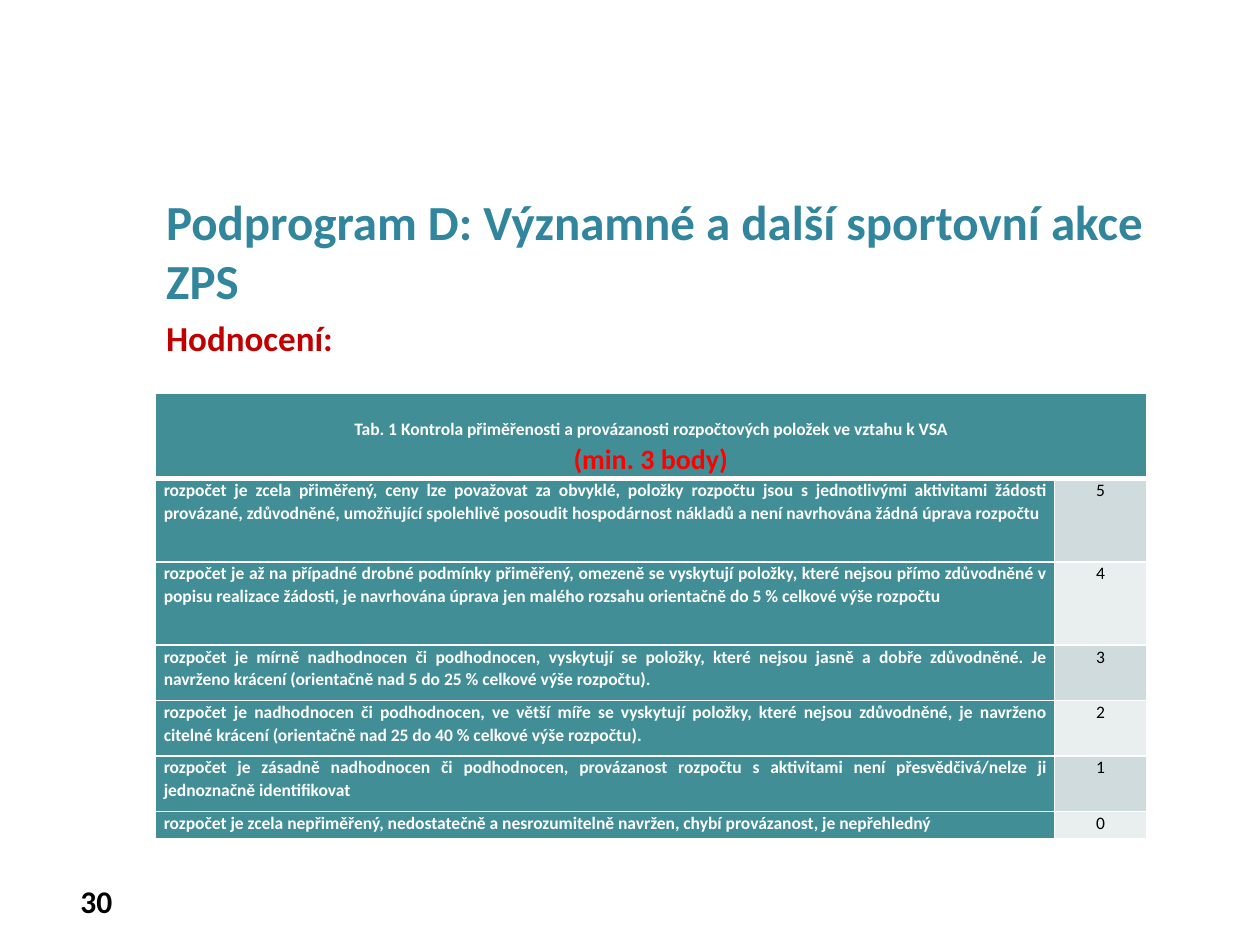
from typing import NamedTuple

from pptx import Presentation
from pptx.dml.color import RGBColor
from pptx.enum import text as t
from pptx.oxml import ns, xmlchemy as x
from pptx.util import Inches, Pt

FONT = "Calibri"
BLUE = RGBColor(0x31, 0x85, 0x9C)
DARK = RGBColor(0xC0, 0x00, 0x00)
RED = RGBColor(0xFF, 0x00, 0x00)
TEAL = RGBColor(0x41, 0x8E, 0x96)
GRAY = RGBColor(0xCF, 0xDB, 0xDD)
PALE = RGBColor(0xE9, 0xEE, 0xEF)
WHITE = RGBColor(0xFF, 0xFF, 0xFF)
BLACK = RGBColor(0x00, 0x00, 0x00)
LEFT, MID, RIGHT, JUST = (t.PP_ALIGN.LEFT, t.PP_ALIGN.CENTER,
                          t.PP_ALIGN.RIGHT, t.PP_ALIGN.JUSTIFY)


class Grade(NamedTuple):
    text: str
    score: int
    high: float


GRADES = [
    Grade("rozpočet je zcela přiměřený, ceny lze považovat za obvyklé, položky "
          "rozpočtu jsou s jednotlivými aktivitami žádosti provázané, zdůvodněné, "
          "umožňující spolehlivě posoudit hospodárnost nákladů a není navrhována "
          "žádná úprava rozpočtu", 5, 0.66),
    Grade("rozpočet je až na případné drobné podmínky přiměřený, omezeně se "
          "vyskytují položky, které nejsou přímo zdůvodněné v popisu realizace "
          "žádosti, je navrhována úprava jen malého rozsahu orientačně do 5 % "
          "celkové výše rozpočtu", 4, 0.66),
    Grade("rozpočet je mírně nadhodnocen či podhodnocen, vyskytují se položky, "
          "které nejsou jasně a dobře zdůvodněné. Je navrženo krácení (orientačně "
          "nad 5 do 25 % celkové výše rozpočtu).", 3, 0.44),
    Grade("rozpočet je nadhodnocen či podhodnocen, ve větší míře se vyskytují "
          "položky, které nejsou zdůvodněné, je navrženo citelné krácení "
          "(orientačně nad 25 do 40 % celkové výše rozpočtu).", 2, 0.44),
    Grade("rozpočet je zásadně nadhodnocen či podhodnocen, provázanost rozpočtu "
          "s aktivitami není přesvědčivá/nelze ji jednoznačně identifikovat",
          1, 0.44),
    Grade("rozpočet je zcela nepřiměřený, nedostatečně a nesrozumitelně navržen, "
          "chybí provázanost, je nepřehledný", 0, 0.22),
]


def write(frame, text: str, *, size: float, color: RGBColor, bold: bool = True,
          align=LEFT, line: float = 1.0, before: float = 0) -> None:
    para = frame.paragraphs[0]
    if para.runs:
        para = frame.add_paragraph()
    para.alignment = align
    para.line_spacing = line
    if before:
        para.space_before = Pt(before)
    run = para.add_run()
    run.text = text
    run.font.name, run.font.size = FONT, Pt(size)
    run.font.bold, run.font.color.rgb = bold, color


def box(slide, left: float, top: float, width: float, high: float):
    frame = slide.shapes.add_textbox(
        Inches(left), Inches(top), Inches(width), Inches(high)).text_frame
    frame.word_wrap = True
    return frame


def dress(cell, fill: RGBColor, top: float = 1, bottom: float = 1) -> None:
    props = cell._tc.get_or_add_tcPr()
    for side, width in zip("LRTB", (1, 1, top, bottom)):
        edge = x.OxmlElement(f"a:ln{side}")
        edge.set("w", str(Pt(width)))
        solid = x.OxmlElement("a:solidFill")
        color = x.OxmlElement("a:srgbClr")
        color.set("val", str(WHITE))
        solid.append(color)
        edge.append(solid)
        props.append(edge)
    cell.fill.solid()
    cell.fill.fore_color.rgb = fill
    cell.margin_left = cell.margin_right = Inches(0.07)
    cell.margin_top = cell.margin_bottom = 0


def draw(slide) -> None:
    highs = [0.68] + [g.high for g in GRADES]
    table = slide.shapes.add_table(
        len(highs), 2, Inches(1.23), Inches(3.12),
        Inches(7.87), Inches(sum(highs))).table
    for col, width in zip(table.columns, (7.14, 0.73)):
        col.width = Inches(width)
    for row, high in zip(table.rows, highs):
        row.height = Inches(high)

    head = table.cell(0, 0)
    head.merge(table.cell(0, 1))
    for col in range(2):
        dress(table.cell(0, col), TEAL, bottom=3)
    head.vertical_anchor = t.MSO_ANCHOR.MIDDLE
    head.margin_top = Inches(0.18)
    write(head.text_frame, "Tab. 1 Kontrola přiměřenosti a provázanosti "
          "rozpočtových položek ve vztahu k\u00a0VSA".replace("\u00a0", " "),
          size=10, color=WHITE, align=MID, line=1.07)
    write(head.text_frame, "(min. 3 body)", size=16, color=RED, align=MID,
          line=1.07)

    for num, grade in enumerate(GRADES, 1):
        name, score = table.cell(num, 0), table.cell(num, 1)
        top = 3 if num == 1 else 1
        dress(name, TEAL, top)
        dress(score, GRAY if num % 2 else PALE, top)
        write(name.text_frame, grade.text, size=10, color=WHITE, align=JUST,
              line=1.07)
        write(score.text_frame, str(grade.score), size=10, color=BLACK,
              bold=False, align=MID, line=1.07)


def main() -> None:
    deck = Presentation()
    deck.slide_width, deck.slide_height = Inches(10), Inches(7.5)
    slide = deck.slides.add_slide(deck.slide_layouts[6])
    page = box(slide, 0.28, 6.95, 0.71, 0.4)
    page.vertical_anchor = t.MSO_ANCHOR.MIDDLE
    write(page, "30", size=18, color=BLACK, align=RIGHT)
    body = box(slide, 1.22, 1.47, 8.28, 5.75)
    write(body, "Podprogram D: Významné a další sportovní akce ZPS", size=28,
          color=BLUE)
    write(body, "Hodnocení:", size=20, color=DARK, before=4)
    draw(slide)
    deck.save("out.pptx")


if __name__ == "__main__":
    main()
